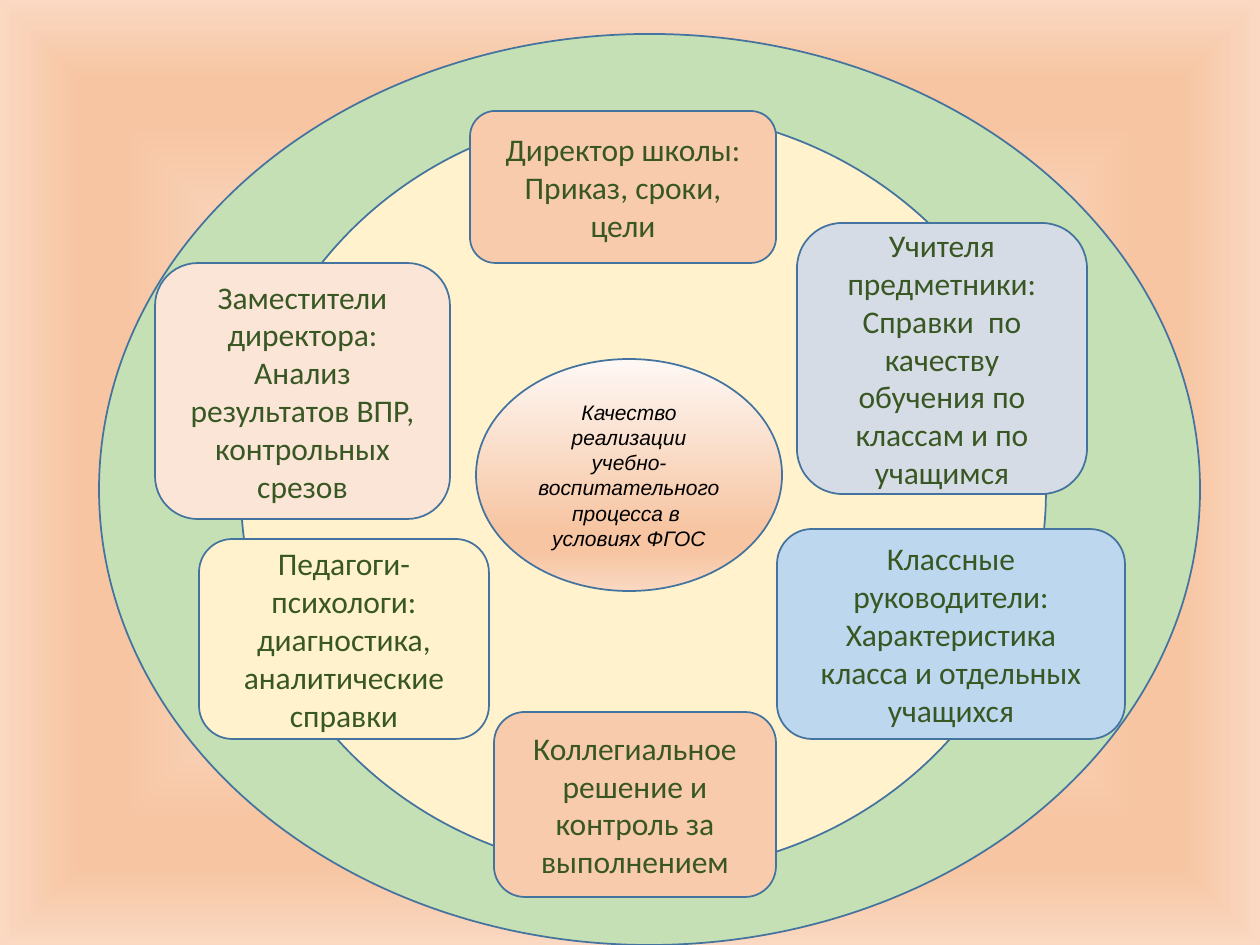
from dataclasses import dataclass

from lxml.etree import SubElement
from pptx import Presentation
from pptx.dml.color import RGBColor
from pptx.enum.shapes import MSO_SHAPE
from pptx.enum.text import MSO_ANCHOR, PP_ALIGN
from pptx.oxml.ns import qn
from pptx.util import Inches, Pt

SCALE = Inches(1) / 126
PAGE = (0, 0, 1260, 945)
WHEEL = (99, 34, 1101, 911)


@dataclass(frozen=True)
class Theme:
    """Colours and type of the slide."""
    line: str = "43739E"
    ring: str = "C5E0B4"
    disc: str = "FFF2CC"
    ink: str = "385723"
    dark: str = "000000"
    peach: str = "F8CBAD"
    grey: str = "D6DCE5"
    blush: str = "FBE5D6"
    sky: str = "BDD7EE"
    glow: tuple = ((0, "FEF8F5"), (74, "F7C5A2"), (83, "F7C5A2"), (100, "FAD8C1"))
    body: str = "Calibri"
    hub: str = "Arial"
    large: int = 18
    small: int = 12


THEME = Theme()

CARDS = [
    ((371, 77, 306, 152), THEME.peach, ["Директор школы:", "Приказ, сроки, цели"]),
    ((698, 189, 290, 271), THEME.grey,
     ["Учителя предметники: Справки  по качеству обучения по классам и по учащимся"]),
    ((56, 229, 295, 256), THEME.blush,
     ["Заместители директора: Анализ результатов ВПР, контрольных срезов"]),
    ((678, 495, 348, 210), THEME.sky,
     ["Классные руководители:", "Характеристика класса и отдельных учащихся"]),
    ((395, 678, 282, 185), THEME.peach,
     ["Коллегиальное решение и контроль за выполнением"]),
    ((100, 505, 290, 200), THEME.disc,
     ["Педагоги-психологи: диагностика, аналитические справки"]),
]


def px(num):
    """Turn px into EMU."""
    return round(num * SCALE)


def apply(item, form):
    """Set each attribute in a dict of format values."""
    for name, value in form.items():
        setattr(item, name, value)


def inset(box, part):
    """Move a part into the frame of its box."""
    return (box[0] + part[0], box[1] + part[1], part[2], part[3])


def blend(fill, root, radial=False):
    """Give a fill the glow gradient, radial or top to bottom."""
    fill.gradient()
    grad = root.find(".//" + qn("a:gradFill"))
    for child in list(grad):
        grad.remove(child)
    stops = SubElement(grad, qn("a:gsLst"))
    for pos, tone in THEME.glow:
        stop = SubElement(stops, qn("a:gs"), pos=str(pos * 1000))
        SubElement(stop, qn("a:srgbClr"), val=tone)
    if radial:
        route = SubElement(grad, qn("a:path"), path="shape")
        SubElement(route, qn("a:fillToRect"), {side: "50000" for side in "ltrb"})
    else:
        SubElement(grad, qn("a:lin"), ang="5400000", scaled="0")


def draw(slide, kind, box, tone=None):
    """Add an outlined shape, with the glow when no tone is given."""
    shape = slide.shapes.add_shape(kind, *map(px, box))
    shape.shadow.inherit = False
    if tone:
        shape.fill.solid()
        shape.fill.fore_color.rgb = RGBColor.from_string(tone)
    else:
        blend(shape.fill, shape._element)
    shape.line.color.rgb = RGBColor.from_string(THEME.line)
    shape.line.width = Pt(1)
    return shape


def write(shape, lines, tone, form):
    """Write centred paragraphs in a shape."""
    frame = shape.text_frame
    apply(frame, {"word_wrap": True, "vertical_anchor": MSO_ANCHOR.MIDDLE})
    frame.text = "\n".join(lines)
    for para in frame.paragraphs:
        para.alignment = PP_ALIGN.CENTER
        font = para.runs[0].font
        apply(font, form)
        font.color.rgb = RGBColor.from_string(tone)


def rings(slide, box):
    """Draw the outer ring and the inner disc."""
    draw(slide, MSO_SHAPE.OVAL, box, THEME.ring)
    draw(slide, MSO_SHAPE.OVAL, inset(box, (142, 77, 805, 762)), THEME.disc)


def cards(slide, box):
    """Place the role cards around the wheel."""
    form = {"name": THEME.body, "size": Pt(THEME.large)}
    for part, tone, lines in CARDS:
        card = draw(slide, MSO_SHAPE.ROUNDED_RECTANGLE, inset(box, part), tone)
        write(card, lines, THEME.ink, form)


def hub(slide, box):
    """Place the goal at the centre of the wheel."""
    core = draw(slide, MSO_SHAPE.OVAL, inset(box, (377, 325, 306, 232)))
    form = {"name": THEME.hub, "size": Pt(THEME.small), "italic": True}
    text = "Качество реализации учебно-воспитательного процесса в  условиях ФГОС"
    write(core, [text], THEME.dark, form)


def main():
    """Build and save the slide."""
    deck = Presentation()
    apply(deck, {"slide_width": px(PAGE[2]), "slide_height": px(PAGE[3])})
    slide = deck.slides.add_slide(deck.slide_layouts[6])
    blend(slide.background.fill, slide._element, radial=True)
    for region in (rings, cards, hub):
        region(slide, WHEEL)
    deck.save("out.pptx")


if __name__ == "__main__":
    main()
